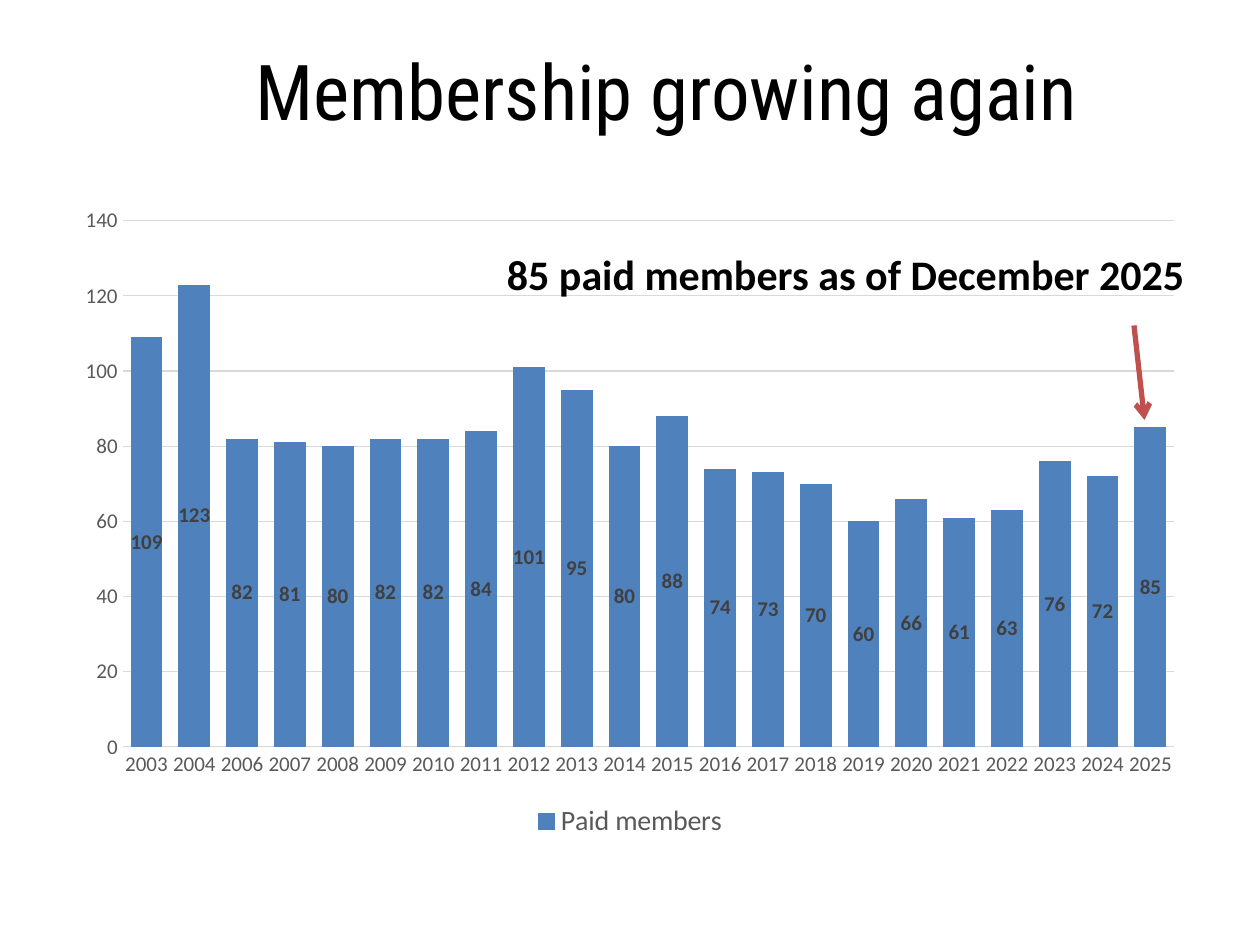
"""Build the membership slide with its yearly chart of paid members."""
from lxml.etree import SubElement
from pptx import Presentation
from pptx.chart.data import CategoryChartData
from pptx.dml.color import RGBColor
from pptx.enum.chart import XL_CHART_TYPE as ChartType, XL_LABEL_POSITION as LabelPos
from pptx.enum.chart import XL_LEGEND_POSITION as LegendPos, XL_TICK_MARK as TickMark
from pptx.enum.shapes import MSO_CONNECTOR as Connector
from pptx.enum.text import MSO_ANCHOR as Anchor, MSO_AUTO_SIZE as AutoSize, PP_ALIGN as Align
from pptx.oxml.ns import qn
from pptx.util import Pt

BLACK = RGBColor(0x00, 0x00, 0x00)
DARK_GREY = RGBColor(0x40, 0x40, 0x40)
GREY = RGBColor(0x59, 0x59, 0x59)
LIGHT_GREY = RGBColor(0xD9, 0xD9, 0xD9)
BLUE = RGBColor(0x4F, 0x81, 0xBD)
RED = RGBColor(0xC0, 0x50, 0x4D)

YEARS = [2003, *range(2004, 2026)]
YEARS.remove(2005)
PAID_MEMBERS = [109, 123, 82, 81, 80, 82, 82, 84, 101, 95, 80,
                88, 74, 73, 70, 60, 66, 61, 63, 76, 72, 85]


def style_font(font, size, color, bold=False, name="Calibri"):
    font.name, font.size, font.bold = name, Pt(size), bold
    font.color.rgb = color


prs = Presentation()
prs.slide_width, prs.slide_height = Pt(720), Pt(540)
slide = prs.slides.add_slide(prs.slide_layouts[5])

title = slide.shapes.title
title.left, title.top, title.width, title.height = Pt(78), Pt(6), Pt(606), Pt(90)
title.text_frame.text = "Membership growing again"
title.text_frame.vertical_anchor = Anchor.MIDDLE
heading = title.text_frame.paragraphs[0]
heading.alignment = Align.CENTER
style_font(heading.runs[0].font, 44, BLACK, name="Roboto Condensed")

membership = CategoryChartData()
membership.categories = [str(year) for year in YEARS]
membership.add_series("Paid members", PAID_MEMBERS)
chart = slide.shapes.add_chart(
    ChartType.COLUMN_STACKED, Pt(36), Pt(111.6), Pt(648), Pt(370.8), membership).chart
style_font(chart.font, 10, BLACK)
chart.has_title = False
chart.has_legend = True
chart.legend.position = LegendPos.BOTTOM
chart.legend.include_in_layout = False
style_font(chart.legend.font, 16, GREY)

year_axis, count_axis = chart.category_axis, chart.value_axis
for axis in (year_axis, count_axis):
    axis.major_tick_mark = axis.minor_tick_mark = TickMark.NONE
    style_font(axis.tick_labels.font, 12, GREY)
count_axis.minimum_scale, count_axis.maximum_scale, count_axis.major_unit = 0, 140, 20
count_axis.has_major_gridlines = True
count_axis.format.line.fill.background()
for line in (year_axis.format.line, count_axis.major_gridlines.format.line):
    line.color.rgb = LIGHT_GREY
    line.width = Pt(0.75)

columns = chart.plots[0]
columns.gap_width, columns.overlap = 50, 100
columns.vary_by_categories = False
paid = columns.series[0]
paid.format.fill.solid()
paid.format.fill.fore_color.rgb = BLUE
paid.data_labels.show_value = True
paid.data_labels.position = LabelPos.CENTER
style_font(paid.data_labels.font, 12, DARK_GREY, bold=True)

callout = slide.shapes.add_textbox(Pt(174), Pt(138.25), Pt(510), Pt(36)).text_frame
callout.word_wrap = True
callout.auto_size = AutoSize.SHAPE_TO_FIT_TEXT
callout.text = "85 paid members as of December 2025"
callout.paragraphs[0].alignment = Align.RIGHT
style_font(callout.paragraphs[0].runs[0].font, 24, BLACK, bold=True)

arrow = slide.shapes.add_connector(Connector.STRAIGHT, Pt(648), Pt(186), Pt(654), Pt(240))
arrow.line.color.rgb = RED
arrow.line.width = Pt(3)
SubElement(arrow.line._get_or_add_ln(), qn("a:tailEnd"), type="arrow")
SubElement(arrow._element.spPr, qn("a:effectLst"))

prs.save("out.pptx")
